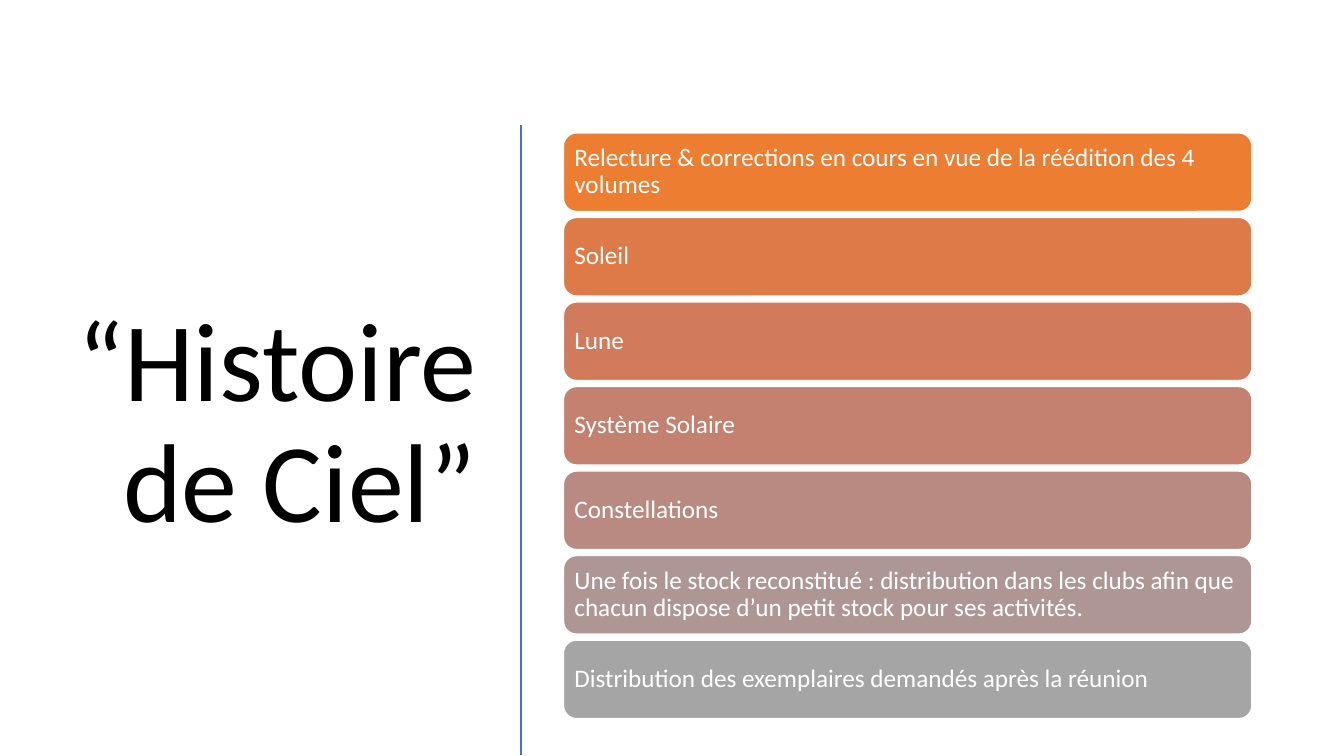
"""Build the “Histoire de Ciel” slide: a title, a divider and a stack of bars."""
from dataclasses import dataclass

from lxml import etree
from pptx import Presentation
from pptx import util as u
from pptx.dml.color import RGBColor
from pptx.enum import shapes, text

COLORS = {
    "ink": "000000",
    "paper": "FFFFFF",
    "divider": "4472C4",
    "orange": "ED7D31",
    "apricot": "DE7A47",
    "coral": "D17B5C",
    "clay": "C48170",
    "rose": "B98A82",
    "mauve": "AE9694",
    "grey": "A5A5A5",
}
BAR_LEFT, BAR_TOP, BAR_WIDTH, BAR_HEIGHT, BAR_PITCH = 14.2, 3.35, 17.35, 1.98, 2.13
BAR_MARGIN = u.Cm(0.18)
BAR_FRAME = {
    "margin_left": BAR_MARGIN,
    "margin_top": BAR_MARGIN,
    "margin_right": BAR_MARGIN,
    "margin_bottom": BAR_MARGIN,
}


@dataclass(frozen=True)
class Bar:
    """One coloured bar of the list."""

    label: str
    color: str


BARS = [
    Bar("Relecture & corrections en cours en vue de la réédition des 4 volumes", "orange"),
    Bar("Soleil", "apricot"),
    Bar("Lune", "coral"),
    Bar("Système Solaire", "clay"),
    Bar("Constellations", "rose"),
    Bar("Une fois le stock reconstitué : distribution dans les clubs "
        "afin que chacun dispose d’un petit stock pour ses activités.", "mauve"),
    Bar("Distribution des exemplaires demandés après la réunion", "grey"),
]


def rgb(name: str) -> RGBColor:
    """Return the named colour."""
    return RGBColor.from_string(COLORS[name])


def apply(target: object, values: dict) -> None:
    """Set each attribute in values on the target."""
    for name, value in values.items():
        setattr(target, name, value)


def write(sp, label: str, size: float, color: str, align, frame: dict) -> None:
    """Put one formatted paragraph into a shape."""
    tf = sp.text_frame
    apply(tf, {
        "word_wrap": True,
        "auto_size": text.MSO_AUTO_SIZE.NONE,
        "vertical_anchor": text.MSO_ANCHOR.MIDDLE,
        **frame,
    })
    p = tf.paragraphs[0]
    apply(p, {"alignment": align, "line_spacing": 0.9, "space_after": u.Pt(6)})
    r = p.add_run()
    r.text = label
    apply(r.font, {"name": "Calibri", "size": u.Pt(size)})
    r.font.color.rgb = rgb(color)


def add_title(s) -> None:
    """Place and fill the title placeholder."""
    sp = s.shapes.title
    apply(sp, {
        "left": u.Cm(1.32),
        "top": u.Cm(2.97),
        "width": u.Cm(10.95),
        "height": u.Cm(15.52),
    })
    write(sp, "“Histoire de Ciel”", 80, "ink", text.PP_ALIGN.RIGHT, {})


def add_divider(s) -> None:
    """Draw the vertical line between title and bars."""
    line = s.shapes.add_connector(
        shapes.MSO_CONNECTOR.STRAIGHT,
        u.Cm(13.13), u.Cm(3.15), u.Cm(13.13), u.Cm(19.02))
    line.line.color.rgb = rgb("divider")
    line.line.width = u.Pt(2)
    ns = line._element.nsmap["a"]
    etree.SubElement(line._element.spPr, f"{{{ns}}}effectLst")


def add_bar(s, index: int, bar: Bar) -> None:
    """Draw one bar at its place in the stack."""
    sp = s.shapes.add_shape(
        shapes.MSO_SHAPE.ROUNDED_RECTANGLE,
        u.Cm(BAR_LEFT), u.Cm(BAR_TOP + index * BAR_PITCH),
        u.Cm(BAR_WIDTH), u.Cm(BAR_HEIGHT))
    sp.shadow.inherit = False
    sp.fill.solid()
    sp.fill.fore_color.rgb = rgb(bar.color)
    sp.line.color.rgb = rgb("paper")
    sp.line.width = u.Pt(1)
    write(sp, bar.label, 18, "paper", text.PP_ALIGN.LEFT, BAR_FRAME)


def main() -> None:
    """Build and save the slide."""
    prs = Presentation()
    apply(prs, {"slide_width": u.Cm(33.87), "slide_height": u.Cm(19.05)})
    s = prs.slides.add_slide(prs.slide_layouts.get_by_name("Title Only"))
    add_title(s)
    add_divider(s)
    for index, bar in enumerate(BARS):
        add_bar(s, index, bar)
    prs.save("out.pptx")


if __name__ == "__main__":
    main()
